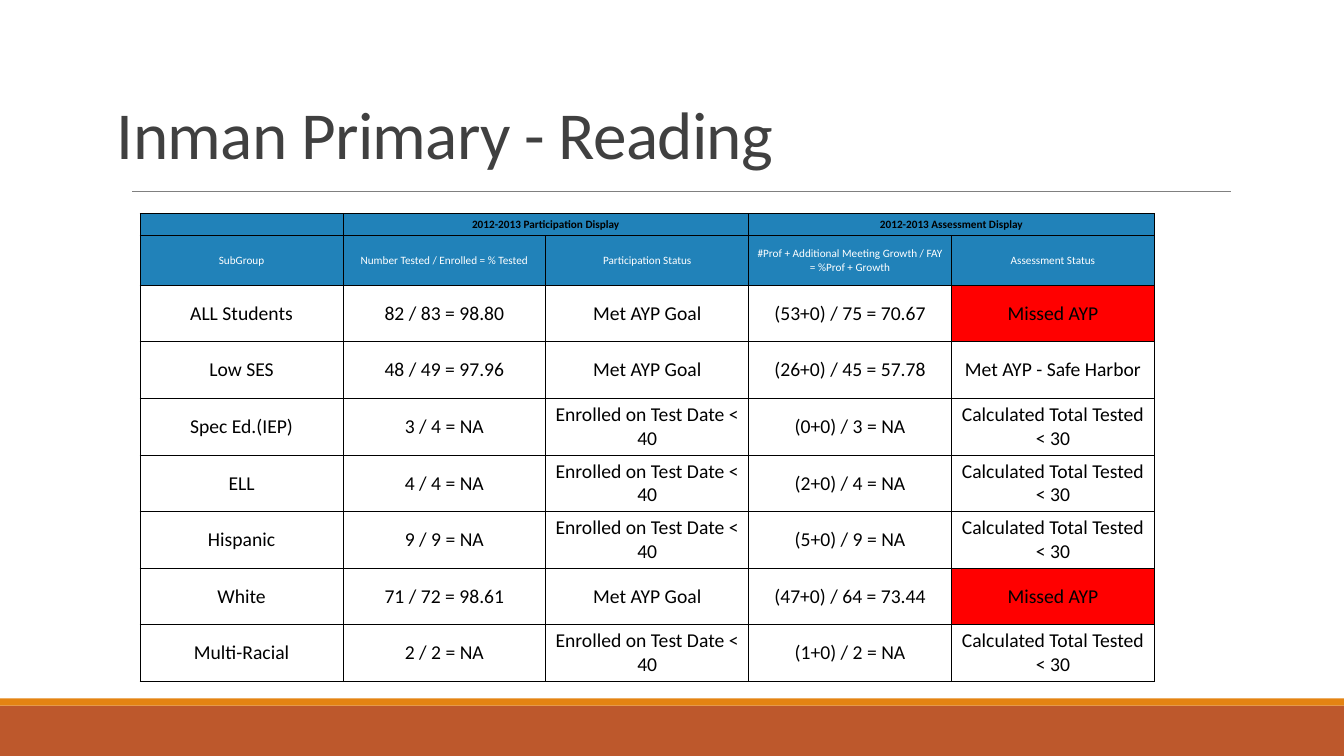
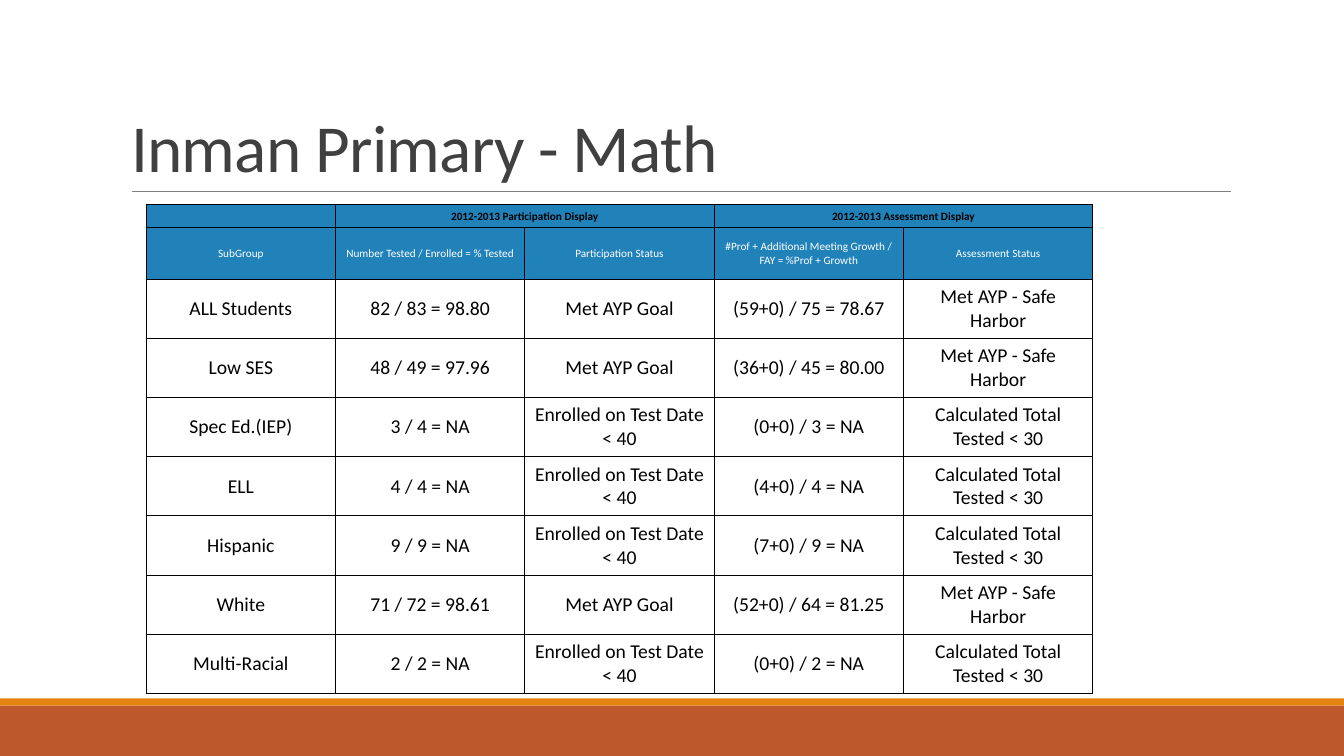
from lxml import etree
from pptx import Presentation
from pptx import util as u
from pptx.dml.color import RGBColor
from pptx.enum import shapes, text
from pptx.oxml import ns

COLORS = {"band": "BD582C", "stripe": "E48312", "rule": "808080", "title": "404040",
          "header": "2182B9", "missed": "FF0000", "white": "FFFFFF", "black": "000000"}
FONT = "Calibri"

# Table wording shared by both subjects
GROUP_HEADS = ["", "2012-2013 Participation Display", "", "2012-2013 Assessment Display", ""]
COLUMN_HEADS = ["SubGroup", "Number Tested / Enrolled = % Tested", "Participation Status",
                "#Prof + Additional Meeting Growth / FAY = %Prof + Growth", "Assessment Status"]
MET, FEW_ENROLLED = "Met AYP Goal", "Enrolled on Test Date < 40"
MISSED, SAFE, FEW_TESTED = "Missed AYP", "Met AYP - Safe Harbor", "Calculated Total Tested < 30"
PARTICIPATION = [
    ("ALL Students", "82 / 83 = 98.80", MET),
    ("Low SES", "48 / 49 = 97.96", MET),
    ("Spec Ed.(IEP)", "3 / 4 = NA", FEW_ENROLLED),
    ("ELL", "4 / 4 = NA", FEW_ENROLLED),
    ("Hispanic", "9 / 9 = NA", FEW_ENROLLED),
    ("White", "71 / 72 = 98.61", MET),
    ("Multi-Racial", "2 / 2 = NA", FEW_ENROLLED),
]

# Each subject: title corner, table box, header row heights, assessment results
SUBJECTS = [
    {"title": "Inman Primary - Reading", "corner": (1.06, 0.18),
     "table": (1.39, 2.12, 10.06, 4.64), "heads": (0.22, 0.49),
     "assessment": [("(53+0) / 75 = 70.67", MISSED), ("(26+0) / 45 = 57.78", SAFE),
                    ("(0+0) / 3 = NA", FEW_TESTED), ("(2+0) / 4 = NA", FEW_TESTED),
                    ("(5+0) / 9 = NA", FEW_TESTED), ("(47+0) / 64 = 73.44", MISSED),
                    ("(1+0) / 2 = NA", FEW_TESTED)]},
    {"title": "Inman Primary - Math", "corner": (1.2, 0.31),
     "table": (1.45, 2.03, 9.39, 4.85), "heads": (0.23, 0.51),
     "assessment": [("(59+0) / 75 = 78.67", SAFE), ("(36+0) / 45 = 80.00", SAFE),
                    ("(0+0) / 3 = NA", FEW_TESTED), ("(4+0) / 4 = NA", FEW_TESTED),
                    ("(7+0) / 9 = NA", FEW_TESTED), ("(52+0) / 64 = 81.25", SAFE),
                    ("(0+0) / 2 = NA", FEW_TESTED)]},
]


def style_font(font, size, color, bold=False):
    font.name, font.size, font.bold = FONT, u.Pt(size), bold
    font.color.rgb = RGBColor.from_string(COLORS[color])


def style_cell(cell, words, size, color, fill, bold):
    cell.fill.solid()
    cell.fill.fore_color.rgb = RGBColor.from_string(COLORS[fill])
    cell.margin_left = cell.margin_right = u.Inches(0.08)
    cell.margin_top = cell.margin_bottom = u.Inches(0.04)
    cell.vertical_anchor = text.MSO_ANCHOR.MIDDLE
    para = cell.text_frame.paragraphs[0]
    para.alignment = text.PP_ALIGN.CENTER
    style_font(para.font, size, color, bold)
    if words:
        para.add_run().text = words
    else:  # keeps an empty cell from stretching its row
        etree.SubElement(para._p, ns.qn("a:endParaRPr"), sz=str(size * 100))
    # Borders stand before the fill in the cell properties
    properties = cell._tc.get_or_add_tcPr()
    for place, side in enumerate(("lnL", "lnR", "lnT", "lnB")):
        border = etree.Element(ns.qn(f"a:{side}"), w=str(u.Pt(0.75)))
        paint = etree.SubElement(border, ns.qn("a:solidFill"))
        etree.SubElement(paint, ns.qn("a:srgbClr"), val=COLORS["black"])
        properties.insert(place, border)


deck = Presentation()
deck.slide_width, deck.slide_height = u.Inches(13.33), u.Inches(7.5)

for subject in SUBJECTS:
    page = deck.slides.add_slide(deck.slide_layouts[5])

    # Footer bands
    for top, height, color in ((7, 0.5, "band"), (6.93, 0.07, "stripe")):
        band = page.shapes.add_shape(shapes.MSO_SHAPE.RECTANGLE, 0, u.Inches(top),
                                     deck.slide_width, u.Inches(height))
        band.shadow.inherit = False
        band.fill.solid()
        band.fill.fore_color.rgb = RGBColor.from_string(COLORS[color])
        band.line.fill.background()

    # Rule under the title
    rule = page.shapes.add_connector(shapes.MSO_CONNECTOR.STRAIGHT, u.Inches(1.31), u.Inches(1.9),
                                     u.Inches(12.21), u.Inches(1.9))
    rule.line.color.rgb = RGBColor.from_string(COLORS["rule"])
    rule.line.width = u.Pt(0.5)
    etree.SubElement(rule._element.spPr, ns.qn("a:effectLst"))

    # Title
    title = page.shapes.title
    title.left, title.top = (u.Inches(length) for length in subject["corner"])
    title.width, title.height = u.Inches(11), u.Inches(1.59)
    frame = title.text_frame
    frame.text = subject["title"]
    frame.word_wrap = True
    frame.auto_size = text.MSO_AUTO_SIZE.NONE
    frame.vertical_anchor = text.MSO_ANCHOR.BOTTOM
    para = frame.paragraphs[0]
    para.alignment = text.PP_ALIGN.LEFT
    para.line_spacing = 0.85
    style_font(para.font, 48, "title")
    para.font._element.set("spc", "-50")

    # Results table
    results = [group + outcome for group, outcome in zip(PARTICIPATION, subject["assessment"])]
    rows = [GROUP_HEADS, COLUMN_HEADS] + results
    left, top, width, height = subject["table"]
    table = page.shapes.add_table(len(rows), len(COLUMN_HEADS), u.Inches(left), u.Inches(top),
                                  u.Inches(width), u.Inches(height)).table
    table.first_row = table.horz_banding = False
    body_height = (height - sum(subject["heads"])) / len(results)
    for row, row_height in zip(table.rows, subject["heads"] + (body_height,) * len(results)):
        row.height = u.Inches(row_height)
    for r, row in enumerate(rows):
        for c, words in enumerate(row):
            if r < 2:
                look = (8, "white" if r else "black", "header", r == 0)
            else:
                look = (14, "black", "missed" if words == MISSED else "white", False)
            style_cell(table.cell(r, c), words, *look)
    for c in (1, 3):
        table.cell(0, c).merge(table.cell(0, c + 1))

deck.save("out.pptx")
